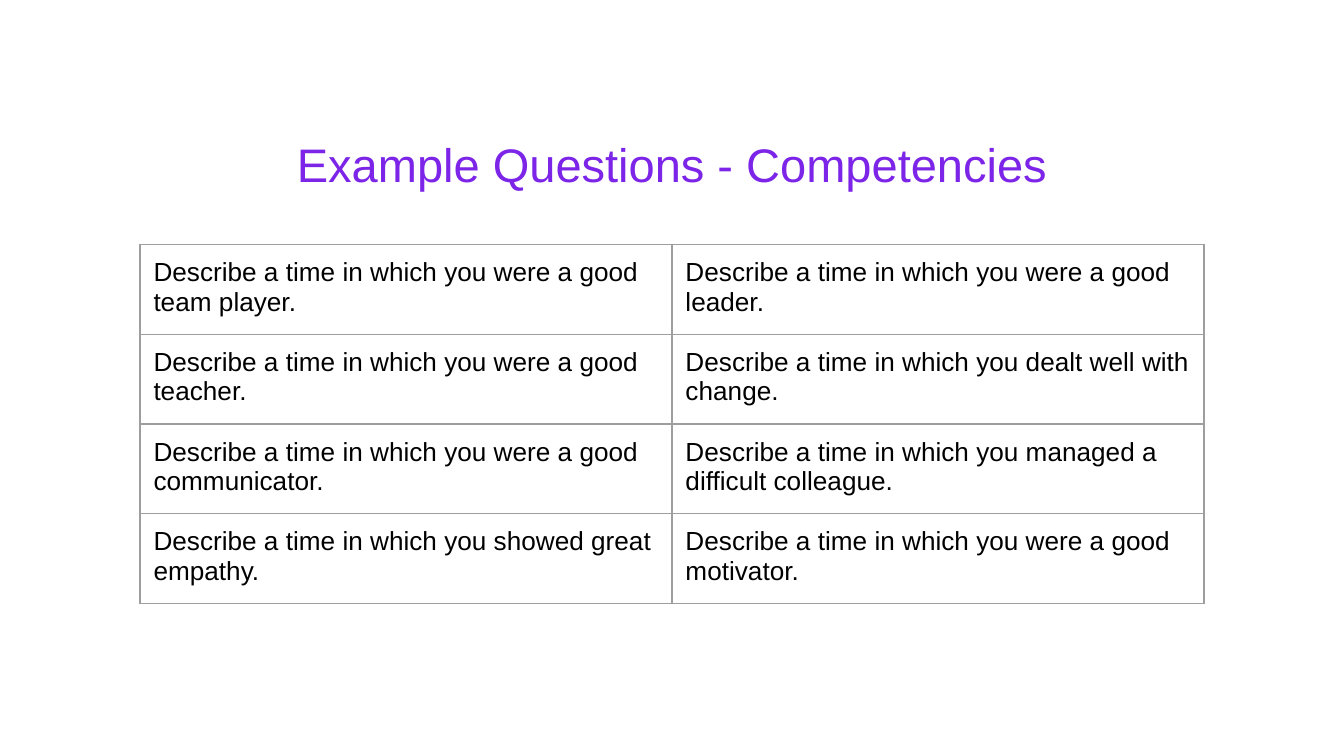
from lxml.etree import SubElement
from pptx import Presentation
from pptx.dml.color import RGBColor
from pptx.enum.text import MSO_ANCHOR, PP_ALIGN
from pptx.oxml.ns import qn
from pptx.util import Inches, Pt

WIDE = 10
HIGH = WIDE * 9 / 16
COLS, ROWS = 100, 100  # layout grid: one unit is 1% of the slide


def color(code):
    return RGBColor.from_string(code)


def write(frame, text, size=14, ink="000000", align=PP_ALIGN.LEFT, font="Arial"):
    frame.word_wrap = True
    para = frame.paragraphs[0]
    para.alignment = align
    run = para.add_run()
    run.text = text
    run.font.name = font
    run.font.size = Pt(size)
    run.font.color.rgb = color(ink)


class Deck:
    accent = "7C24E8"
    rule = "9E9E9E"
    pad = Inches(0.1)

    def __init__(self):
        self.deck = Presentation()
        self.deck.slide_width = Inches(WIDE)
        self.deck.slide_height = Inches(HIGH)
        self.slide = self.deck.slides.add_slide(self.deck.slide_layouts[6])

    def place(self, col, row, cols, rows):
        return (Inches(col * WIDE / COLS), Inches(row * HIGH / ROWS),
                Inches(cols * WIDE / COLS), Inches(rows * HIGH / ROWS))

    def inset(self, item):
        item.margin_left = item.margin_right = self.pad
        item.margin_top = item.margin_bottom = self.pad

    def title(self, text, *area):
        frame = self.slide.shapes.add_textbox(*self.place(*area)).text_frame
        self.inset(frame)
        frame.vertical_anchor = MSO_ANCHOR.TOP
        write(frame, text, size=25.2, ink=self.accent, align=PP_ALIGN.CENTER)

    def border(self, cell):
        props = cell._tc.get_or_add_tcPr()
        for at, side in enumerate(("lnL", "lnR", "lnT", "lnB")):
            line = SubElement(props, qn(f"a:{side}"), w=str(Pt(0.75)))
            fill = SubElement(line, qn("a:solidFill"))
            SubElement(fill, qn("a:srgbClr"), val=self.rule)
            props.insert(at, line)  # borders go before the fill

    def table(self, data, *area):
        grid = self.slide.shapes.add_table(
            len(data), len(data[0]), *self.place(*area)).table
        grid.first_row = grid.horz_banding = False
        for r, line in enumerate(data):
            for c, text in enumerate(line):
                cell = grid.cell(r, c)
                cell.fill.background()
                self.inset(cell)
                self.border(cell)
                write(cell.text_frame, text)

    def save(self):
        self.deck.save("out.pptx")


def main():
    deck = Deck()

    # Heading
    deck.title("Example Questions - Competencies", 3.4, 16.18, 93.2, 11.2)

    # Question pairs, all with the same opening; rows grow to fit two lines
    pairs = [
        ("were a good team player.", "were a good leader."),
        ("were a good teacher.", "dealt well with change."),
        ("were a good communicator.", "managed a difficult colleague."),
        ("showed great empathy.", "were a good motivator."),
    ]
    lead = "Describe a time in which you "
    deck.table([[lead + end for end in pair] for pair in pairs],
               10.42, 32.36, 79.17, 30)

    deck.save()


if __name__ == "__main__":
    main()
